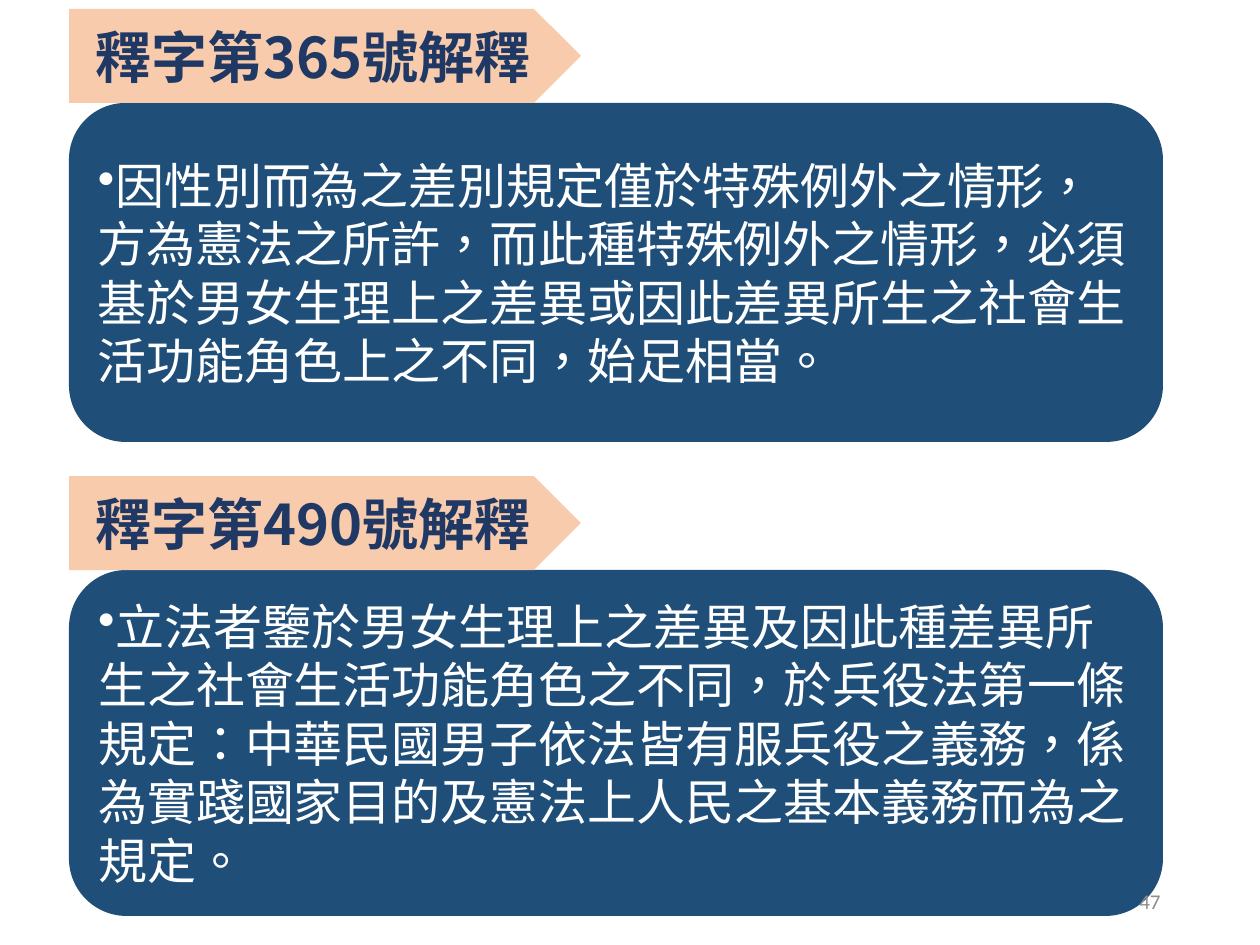
from dataclasses import dataclass

from pptx import Presentation
from pptx.dml.color import RGBColor
from pptx.enum.shapes import MSO_SHAPE
from pptx.enum.text import MSO_ANCHOR, PP_ALIGN
from pptx.oxml.ns import qn
from pptx.util import Emu, Pt

PENTAGON = MSO_SHAPE.PENTAGON
ROUNDED = MSO_SHAPE.ROUNDED_RECTANGLE
MIDDLE = MSO_ANCHOR.MIDDLE
LEFT, CENTER, RIGHT = PP_ALIGN.LEFT, PP_ALIGN.CENTER, PP_ALIGN.RIGHT
EMU_PER_INCH, PX_PER_INCH = 914400, 126
BLANK_LAYOUT = 6

MARGIN = 69
HEADING_WIDTH, HEADING_HEIGHT = 512, 94
BODY_WIDTH = 1094
INTERPRETATIONS = [
    (9, 339, "釋字第365號解釋",
     "因性別而為之差別規定僅於特殊例外之情形，方為憲法之所許，而此種特殊例外之情形，"
     "必須基於男女生理上之差異或因此差異所生之社會生活功能角色上之不同，始足相當。"),
    (476, 346, "釋字第490號解釋",
     "立法者鑒於男女生理上之差異及因此種差異所生之社會生活功能角色之不同，"
     "於兵役法第一條規定：中華民國男子依法皆有服兵役之義務，"
     "係為實踐國家目的及憲法上人民之基本義務而為之規定。"),
]


@dataclass(frozen=True)
class Theme:
    """Colours, fonts and type sizes of the slide."""
    heading_fill: str = "F8CBAD"
    heading_text: str = "203864"
    body_fill: str = "1F4E79"
    body_text: str = "FFFFFF"
    number_text: str = "8C8C8C"
    chinese_font: str = "Noto Sans CJK SC"
    number_font: str = "Calibri"
    heading_size: int = 32
    body_size: int = 28
    body_leading: float = 33.4
    number_size: int = 12


THEME = Theme()


def px(length):
    """Turn pixels into EMU."""
    return Emu(round(length * EMU_PER_INCH / PX_PER_INCH))


def write_text(shape, text, *, size, color, font=THEME.chinese_font, bold=False,
               align=LEFT, leading=None, bullet=None, wrap=True):
    """Write one formatted paragraph into a shape."""
    frame = shape.text_frame
    frame.word_wrap = wrap
    frame.vertical_anchor = MIDDLE
    paragraph = frame.paragraphs[0]
    paragraph.alignment = align
    if leading:
        paragraph.line_spacing = Pt(leading)
    if bullet:
        properties = paragraph._p.get_or_add_pPr()
        properties.set("marL", "0")
        properties.set("indent", "0")
        mark = properties.makeelement(qn("a:buChar"), {"char": bullet})
        properties.append(mark)
    run = paragraph.add_run()
    run.text = text
    run.font.name = font
    run.font.size = Pt(size)
    run.font.bold = bold
    run.font.color.rgb = RGBColor.from_string(color)
    run_properties = run._r.get_or_add_rPr()
    run_properties.set("lang", "zh-TW")
    east_asian = run_properties.makeelement(qn("a:ea"), {"typeface": font})
    run_properties.find(qn("a:latin")).addnext(east_asian)


def add_panel(slide, kind, left, top, width, height, fill):
    """Add a plain filled shape."""
    shape = slide.shapes.add_shape(kind, px(left), px(top), px(width), px(height))
    shape.shadow.inherit = False
    shape.fill.solid()
    shape.fill.fore_color.rgb = RGBColor.from_string(fill)
    shape.line.fill.background()
    return shape


def add_interpretation(slide, top, body_height, heading, body):
    """Add an arrow heading with its bulleted panel below."""
    panel = add_panel(slide, ROUNDED, MARGIN, top + HEADING_HEIGHT,
                      BODY_WIDTH, body_height, THEME.body_fill)
    write_text(panel, body, size=THEME.body_size, color=THEME.body_text,
               leading=THEME.body_leading, bullet="•")
    arrow = add_panel(slide, PENTAGON, MARGIN, top, HEADING_WIDTH, HEADING_HEIGHT,
                      THEME.heading_fill)
    write_text(arrow, heading, size=THEME.heading_size, color=THEME.heading_text,
               bold=True, align=CENTER, wrap=False)


def add_page_number(slide, number):
    """Add the page number at the lower right."""
    box = slide.shapes.add_textbox(px(890), px(876), px(283), px(50))
    write_text(box, number, size=THEME.number_size, color=THEME.number_text,
               font=THEME.number_font, align=RIGHT)


def main():
    """Build and save the slide."""
    presentation = Presentation()
    presentation.slide_width, presentation.slide_height = px(1260), px(945)
    slide = presentation.slides.add_slide(presentation.slide_layouts[BLANK_LAYOUT])
    for interpretation in INTERPRETATIONS:
        add_interpretation(slide, *interpretation)
    add_page_number(slide, "47")
    presentation.save("out.pptx")


if __name__ == "__main__":
    main()
